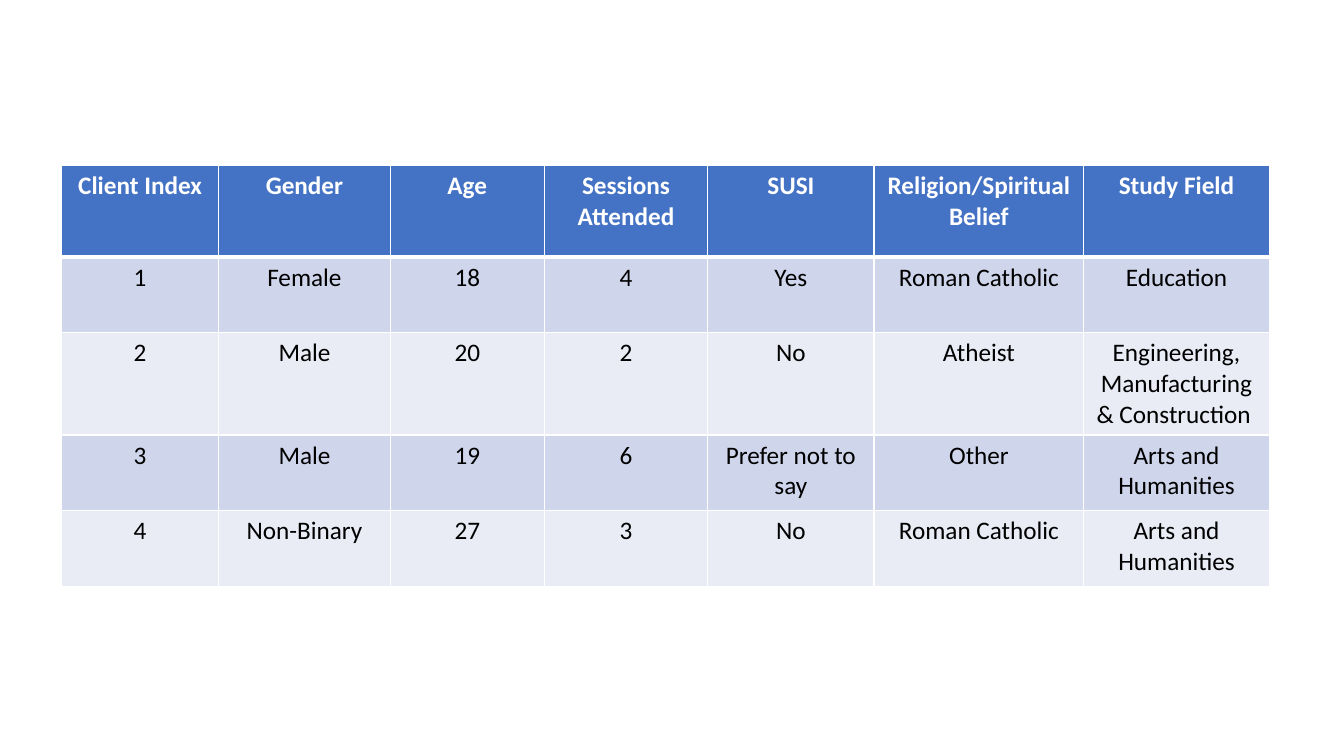
from lxml.etree import SubElement
from pptx import Presentation
from pptx.dml.color import RGBColor
from pptx.enum.text import PP_ALIGN
from pptx.oxml.ns import qn
from pptx.util import Inches, Pt

HEADINGS = ["Client Index", "Gender", "Age", "Sessions Attended", "SUSI",
            "Religion/Spiritual Belief", "Study Field"]
CLIENTS = [
    ["1", "Female", "18", "4", "Yes", "Roman Catholic", "Education"],
    ["2", "Male", "20", "2", "No", "Atheist",
     "Engineering, Manufacturing & Construction "],
    ["3", "Male", "19", "6", "Prefer not to say", "Other",
     "Arts and Humanities"],
    ["4", "Non-Binary", "27", "3", "No", "Roman Catholic",
     "Arts and Humanities"],
]
COLUMN_WIDTHS = [1.56, 1.7, 1.53, 1.62, 1.65, 2.08, 1.84]
HEADER_HEIGHT, CLIENT_HEIGHT = 0.91, 0.75


def color(value):
    return RGBColor.from_string(value)


class SlideBuilder:
    font = "Calibri"
    text_size = 18
    header_fill = "4472C4"
    band_fills = ["CFD5EA", "E9EBF5"]
    header_text, body_text, border = "FFFFFF", "000000", "FFFFFF"

    def __init__(self, slide):
        self.slide = slide

    def table(self, left, top, widths, heights, rows):
        table = self.slide.shapes.add_table(
            len(rows), len(widths), Inches(left), Inches(top),
            Inches(sum(widths)), Inches(sum(heights))).table
        for column, width in zip(table.columns, widths):
            column.width = Inches(width)
        for row, height in zip(table.rows, heights):
            row.height = Inches(height)
        for row_index, texts in enumerate(rows):
            for column_index, text in enumerate(texts):
                self.cell(table.cell(row_index, column_index), text, row_index)

    def cell(self, cell, text, row_index):
        is_header = row_index == 0
        # Borders go before the fill; a thick rule separates the header
        self.borders(cell, top=3 if row_index == 1 else 1,
                     bottom=3 if is_header else 1)
        band = self.band_fills[(row_index - 1) % 2]
        cell.fill.solid()
        cell.fill.fore_color.rgb = color(self.header_fill if is_header else band)

        paragraph = cell.text_frame.paragraphs[0]
        paragraph.alignment = PP_ALIGN.CENTER
        run = paragraph.add_run()
        run.text = text
        run.font.name = self.font
        run.font.size = Pt(self.text_size)
        run.font.bold = is_header
        run.font.color.rgb = color(self.header_text if is_header else self.body_text)

    def borders(self, cell, top, bottom):
        properties = cell._tc.get_or_add_tcPr()
        for side, points in (("L", 1), ("R", 1), ("T", top), ("B", bottom)):
            line = SubElement(properties, qn(f"a:ln{side}"), w=str(Pt(points)))
            fill = SubElement(line, qn("a:solidFill"))
            SubElement(fill, qn("a:srgbClr"), val=self.border)


def main():
    presentation = Presentation()
    presentation.slide_width = Inches(13.33)
    presentation.slide_height = Inches(7.5)
    slide = presentation.slides.add_slide(presentation.slide_layouts[6])

    # Client table
    heights = [HEADER_HEIGHT] + [CLIENT_HEIGHT] * len(CLIENTS)
    SlideBuilder(slide).table(0.61, 1.64, COLUMN_WIDTHS, heights,
                              [HEADINGS] + CLIENTS)
    presentation.save("out.pptx")


if __name__ == "__main__":
    main()
